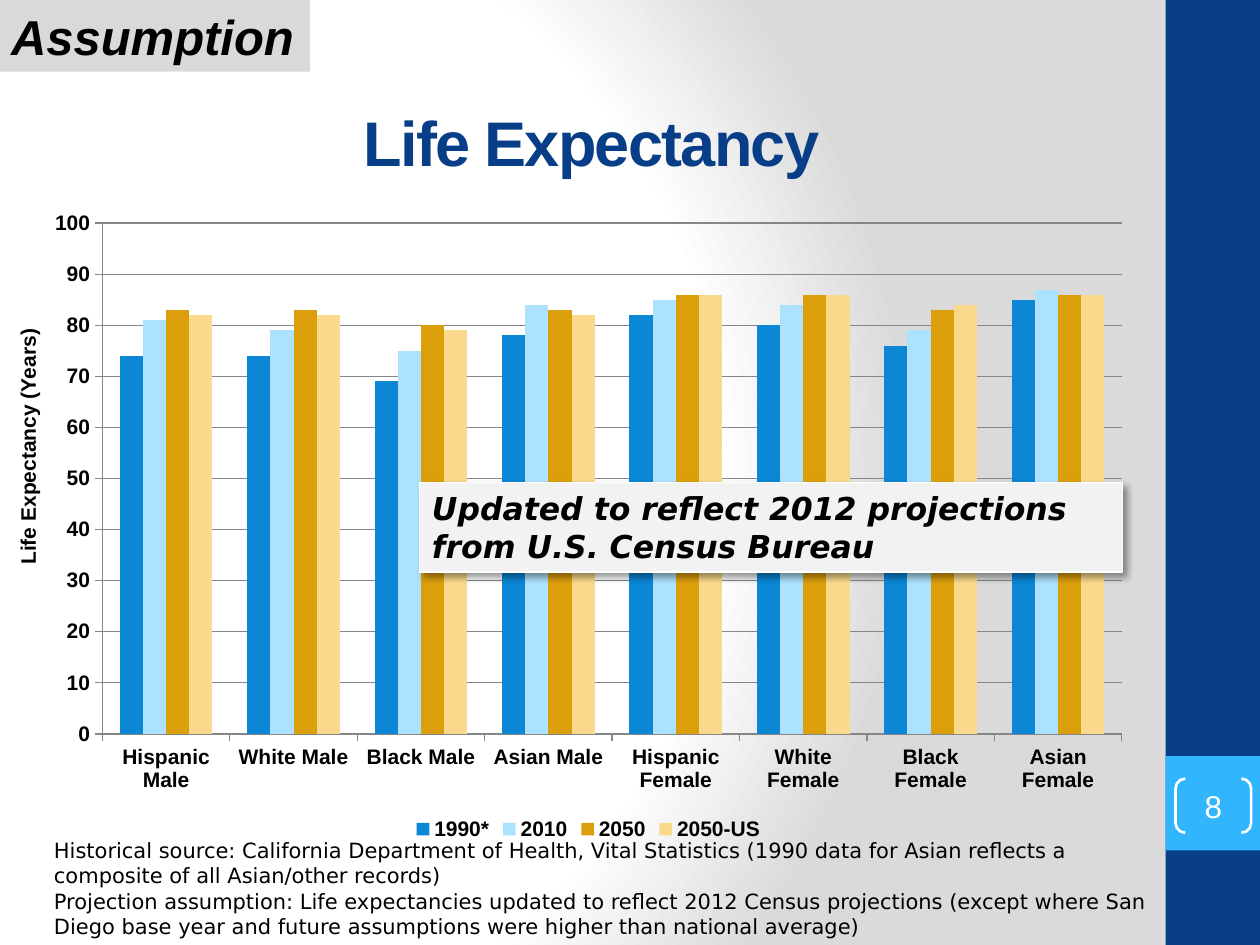
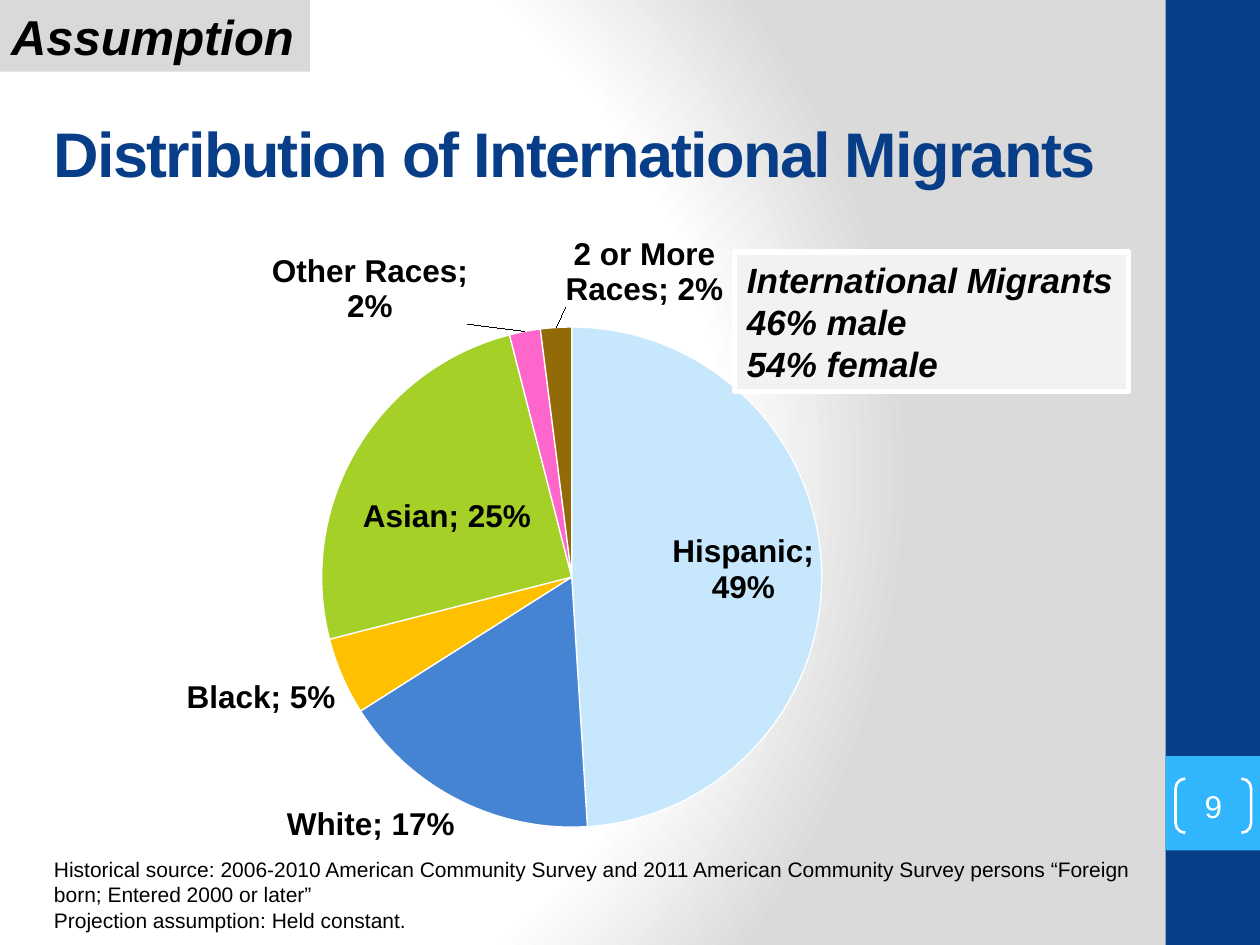
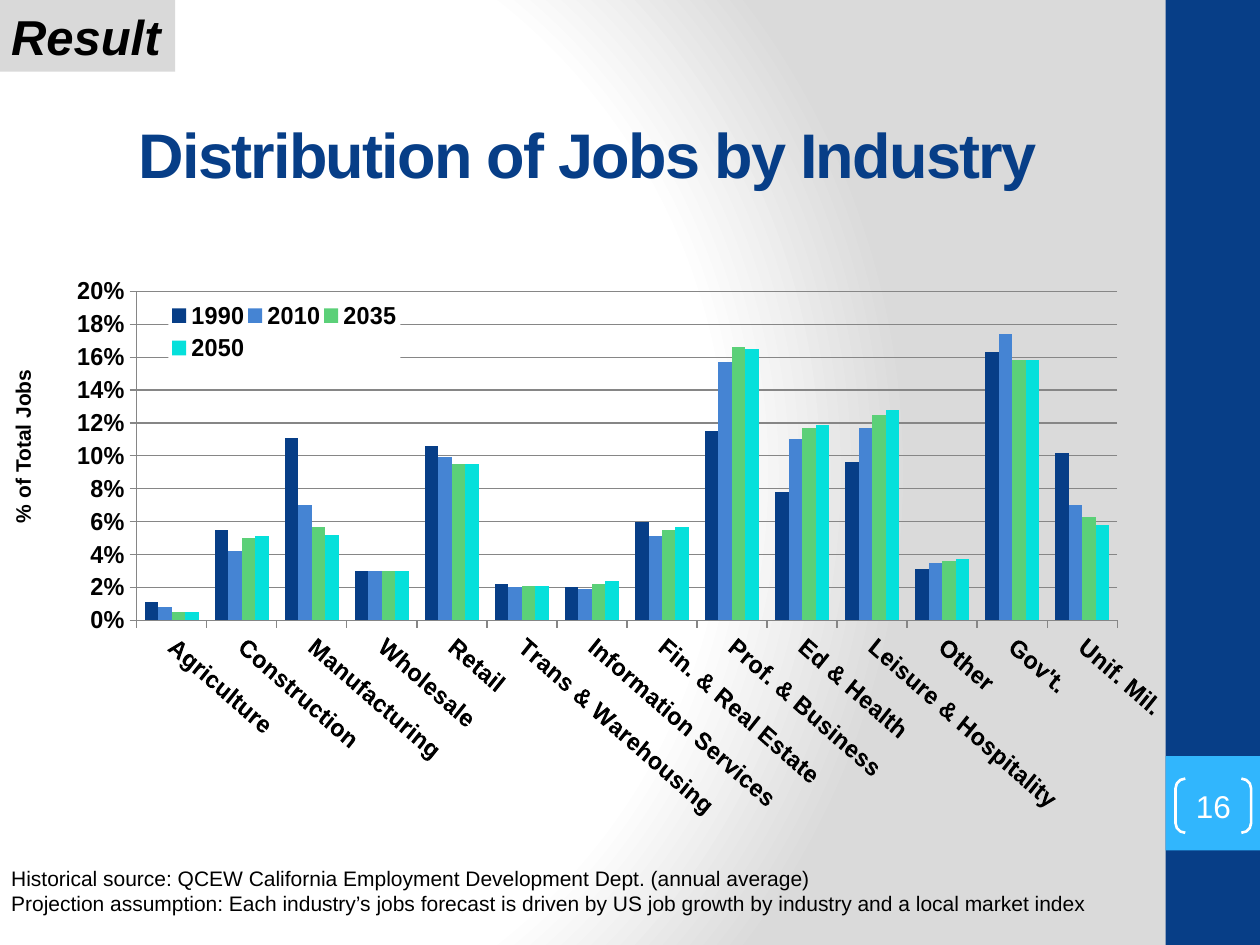
from lxml import etree
from pptx import Presentation
from pptx.chart.data import CategoryChartData
from pptx.dml.color import RGBColor
from pptx.enum.chart import XL_CHART_TYPE, XL_LABEL_POSITION, XL_LEGEND_POSITION, XL_TICK_MARK
from pptx.enum.shapes import MSO_SHAPE
from pptx.enum.text import MSO_ANCHOR, MSO_AUTO_SIZE, PP_ALIGN
from pptx.oxml import parse_xml
from pptx.oxml.ns import nsdecls, qn
from pptx.util import Inches, Pt

NAVY = RGBColor(0x07, 0x3E, 0x87)
SKY = RGBColor(0x31, 0xB6, 0xFD)
WHITE = RGBColor(0xFF, 0xFF, 0xFF)
BLACK = RGBColor(0x00, 0x00, 0x00)
TAG_GRAY = RGBColor(0xD9, 0xD9, 0xD9)
CALLOUT_GRAY = RGBColor(0xF2, 0xF2, 0xF2)
AXIS_GRAY = RGBColor(0x86, 0x86, 0x86)
BLUE = RGBColor(0x0B, 0x87, 0xD6)
PALE_BLUE = RGBColor(0xAD, 0xE2, 0xFE)
GOLD = RGBColor(0xDC, 0x9F, 0x0C)
PALE_GOLD = RGBColor(0xF9, 0xD9, 0x8C)
ICE = RGBColor(0xC6, 0xE7, 0xFC)
MID_BLUE = RGBColor(0x45, 0x84, 0xD3)
AMBER = RGBColor(0xFF, 0xC0, 0x00)
LIME = RGBColor(0xA5, 0xD0, 0x28)
PINK = RGBColor(0xFF, 0x66, 0xCC)
BROWN = RGBColor(0x93, 0x6A, 0x08)
GREEN = RGBColor(0x5B, 0xD0, 0x78)
TEAL = RGBColor(0x05, 0xE0, 0xDB)

SANS = "Arial"
WIDE = "DejaVu Sans"
CHART_BOX = (0.26, 1.58, 8.82, 5.13)


def inches(box):
    """Turn a box of plain numbers into lengths."""
    return [Inches(n) for n in box]


def add_panel(slide, box, preset=MSO_SHAPE.RECTANGLE, fill=None, line=None, line_width=0.75):
    """Add a flat preset shape."""
    sp = slide.shapes.add_shape(preset, *inches(box))
    sp.shadow.inherit = False
    if fill is None:
        sp.fill.background()
    else:
        sp.fill.solid()
        sp.fill.fore_color.rgb = fill
    if line is None:
        sp.line.fill.background()
    else:
        sp.line.color.rgb = line
        sp.line.width = Pt(line_width)
    return sp


def write(sp, text, size=12, font=SANS, color=BLACK, bold=False, italic=False, spacing=None,
          align=PP_ALIGN.LEFT, anchor=MSO_ANCHOR.TOP, wrap=True, grow=True, inset=None):
    """Fill a shape with text, one paragraph to a line."""
    tf = sp.text_frame
    tf.word_wrap = wrap
    tf.vertical_anchor = anchor
    tf.auto_size = MSO_AUTO_SIZE.SHAPE_TO_FIT_TEXT if grow else MSO_AUTO_SIZE.NONE
    if inset is not None:
        tf.margin_left = tf.margin_right = tf.margin_top = tf.margin_bottom = Inches(inset)
    for i, line in enumerate(text.split("\n")):
        p = tf.add_paragraph() if i else tf.paragraphs[0]
        p.alignment = align
        r = p.add_run()
        r.text = line
        r.font.size = Pt(size)
        r.font.name = font
        r.font.bold = bold
        r.font.italic = italic
        r.font.color.rgb = color
        if spacing is not None:
            r.font._element.set("spc", str(spacing * 100))
    return sp


def add_text(slide, text, box, **fmt):
    """Add a text box."""
    return write(slide.shapes.add_textbox(*inches(box)), text, **fmt)


def set_background(master):
    """Give every slide the white to gray radial gradient."""
    master.background.fill.gradient()
    grad = master.element.find(".//" + qn("a:gradFill"))
    stops = "".join(
        f'<a:gs pos="{pos * 1000}"><a:srgbClr val="{color}"/></a:gs>'
        for pos, color in ((0, "FFFFFF"), (75, "FFFFFF"), (100, "DADADA")))
    grad.getparent().replace(grad, parse_xml(
        f'<a:gradFill {nsdecls("a")} rotWithShape="1"><a:gsLst>{stops}</a:gsLst>'
        '<a:path path="circle"><a:fillToRect l="20000" t="50000" r="100000" b="50000"/>'
        '</a:path></a:gradFill>'))


def add_frame(prs, number, title, title_box, tag, tag_width, title_align=PP_ALIGN.LEFT):
    """Start a slide with its side band, number, title and corner tag."""
    slide = prs.slides.add_slide(prs.slide_layouts[6])
    add_panel(slide, (9.25, 0, 0.75, 7.5), fill=NAVY)
    add_panel(slide, (9.25, 6, 0.75, 0.75), fill=SKY)
    bracket = add_panel(slide, (9.33, 6.18, 0.6, 0.43), MSO_SHAPE.DOUBLE_BRACKET,
                        line=WHITE, line_width=1.5)
    bracket.adjustments[0] = 0.18
    write(bracket, str(number), size=18, color=WHITE, align=PP_ALIGN.CENTER,
          anchor=MSO_ANCHOR.MIDDLE, grow=False, inset=0)
    add_text(slide, title, title_box, size=36, color=NAVY, bold=True, spacing=-1,
             align=title_align, anchor=MSO_ANCHOR.MIDDLE, grow=False)
    write(add_panel(slide, (-0.01, 0, tag_width, 0.57), fill=TAG_GRAY), tag,
          size=28, bold=True, italic=True, wrap=False)
    return slide


def add_axis_title(slide, text, box):
    """Add a value axis title that reads upwards."""
    add_text(slide, text, box, bold=True).rotation = 270


def add_callout_shadow(sp):
    """Cast a soft shadow to the lower right."""
    effects = sp._element.spPr.find(qn("a:effectLst"))
    effects.append(parse_xml(
        f'<a:outerShdw {nsdecls("a")} blurRad="{Pt(4)}" dist="{Pt(3)}" dir="2700000" algn="tl" '
        'rotWithShape="0"><a:srgbClr val="000000"><a:alpha val="40000"/></a:srgbClr>'
        '</a:outerShdw>'))


def layout_xml(x, y, w=None, h=None, inner=False):
    """Build a manual chart layout, or an offset when no size is given."""
    root = parse_xml(f'<c:layout {nsdecls("c")}><c:manualLayout/></c:layout>')
    values = [("layoutTarget", "inner")] if inner else []
    if w is not None:
        values += [("xMode", "edge"), ("yMode", "edge")]
    values += [("x", x), ("y", y)]
    if w is not None:
        values += [("w", w), ("h", h)]
    for name, value in values:
        etree.SubElement(root[0], qn("c:" + name)).set("val", str(value))
    return root


def place_after(anchor, layout):
    """Put a layout behind its anchor element in place of any other."""
    parent = anchor.getparent()
    for old in parent.findall(qn("c:layout")):
        parent.remove(old)
    anchor.addnext(layout)


def place_plot(chart, *box):
    """Fix the inner plot area."""
    area = chart.element.find(".//" + qn("c:plotArea"))
    for old in area.findall(qn("c:layout")):
        area.remove(old)
    area.insert(0, layout_xml(*box, inner=True))


def add_chart(slide, kind, box, cats, series, size, number_format):
    """Add a chart with bold black text."""
    data = CategoryChartData(number_format=number_format)
    data.categories = cats
    for name, values in series:
        data.add_series(name, values)
    chart = slide.shapes.add_chart(kind, *inches(box), data).chart
    chart.has_title = False
    chart.has_legend = False
    chart.font.size = Pt(size)
    chart.font.name = SANS
    chart.font.bold = True
    chart.font.color.rgb = BLACK
    return chart


def add_columns(slide, box, cats, series, size, gap, top, step, number_format, legend):
    """Add a clustered column chart from (name, colour, values) rows."""
    chart = add_chart(slide, XL_CHART_TYPE.COLUMN_CLUSTERED, box, cats,
                      [(name, values) for name, _, values in series], size, number_format)
    plot = chart.plots[0]
    plot.gap_width = gap
    plot.overlap = 0
    plot.vary_by_categories = False
    for ser, (_, color, _) in zip(plot.series, series):
        ser.format.fill.solid()
        ser.format.fill.fore_color.rgb = color
        ser.invert_if_negative = False
    axis = chart.value_axis
    axis.minimum_scale, axis.maximum_scale, axis.major_unit = 0, top, step
    axis.has_major_gridlines = True
    axis.tick_labels.number_format = number_format
    axis.tick_labels.number_format_is_linked = False
    for ax in (axis, chart.category_axis):
        ax.major_tick_mark = XL_TICK_MARK.OUTSIDE
        ax.minor_tick_mark = XL_TICK_MARK.NONE
        ax.format.line.color.rgb = AXIS_GRAY
    axis.major_gridlines.format.line.color.rgb = AXIS_GRAY
    chart.has_legend = True
    chart.legend.position = legend
    chart.legend.include_in_layout = False
    return chart


def add_pie(slide, box, slices):
    """Add a pie from (name, value, colour, label position, label offset) rows."""
    chart = add_chart(slide, XL_CHART_TYPE.PIE, box, [s[0] for s in slices],
                      [("Series 1", [s[1] for s in slices])], 18, "0%")
    place_plot(chart, 0.26, 0.18, 0.45, 0.81)
    chart.plots[0].vary_by_categories = True
    ser = chart.plots[0].series[0]
    labels = ser.data_labels
    labels.show_value = labels.show_category_name = True
    labels.number_format = "0%"
    labels.number_format_is_linked = False
    for i, (_, _, color, position, _) in enumerate(slices):
        point = ser.points[i]
        point.format.fill.solid()
        point.format.fill.fore_color.rgb = color
        point.format.line.color.rgb = WHITE
        point.format.line.width = Pt(0.75)
        point.data_label.position = position
    for label, (*_, offset) in zip(chart.element.iter(qn("c:dLbl")), slices):
        label.find(qn("c:showCatName")).set("val", "1")
        label.find(qn("c:idx")).addnext(
            parse_xml(f'<c:numFmt {nsdecls("c")} formatCode="0%" sourceLinked="0"/>'))
        label.find(qn("c:showBubbleSize")).addnext(
            parse_xml(f'<c:separator {nsdecls("c")}>; </c:separator>'))
        if offset:
            place_after(label.find(qn("c:idx")), layout_xml(*offset))


def life_expectancy(prs):
    """Build the life expectancy slide."""
    slide = add_frame(prs, 8, "Life Expectancy", (2.79, 0.5, 4, 1.25), "Assumption", 2.47)
    cats = [f"{group} {sex}" for sex in ("Male", "Female")
            for group in ("Hispanic", "White", "Black", "Asian")]
    add_columns(slide, CHART_BOX, cats, [
        ("1990*", BLUE, (74, 74, 69, 78, 82, 80, 76, 85)),
        ("2010", PALE_BLUE, (81, 79, 75, 84, 85, 84, 79, 87)),
        ("2050", GOLD, (83, 83, 80, 83, 86, 86, 83, 86)),
        ("2050-US", PALE_GOLD, (82, 82, 79, 82, 86, 86, 84, 86)),
    ], 12, 150, 100, 10, "General", XL_LEGEND_POSITION.BOTTOM)
    callout = add_panel(slide, (3.33, 3.83, 5.58, 0.71), fill=CALLOUT_GRAY, line=WHITE)
    add_callout_shadow(callout)
    write(callout, "Updated to reflect 2012 projections from U.S. Census Bureau",
          size=18, font=WIDE, bold=True, italic=True)
    add_text(slide, "Historical source: California Department of Health, Vital Statistics "
             "(1990 data for Asian reflects a composite of all Asian/other records)\n"
             "Projection assumption: Life expectancies updated to reflect 2012 Census projections "
             "(except where San Diego base year and future assumptions were higher than "
             "national average)", (0.33, 6.6, 8.92, 0.71), font=WIDE)
    add_axis_title(slide, "Life Expectancy (Years)", (-1.03, 3.18, 2.5, 0.3))


def international_migrants(prs):
    """Build the international migrants slide."""
    slide = add_frame(prs, 9, "Distribution of International Migrants",
                      (0.33, 0.58, 9.5, 1.25), "Assumption", 2.47)
    inside, outside = XL_LABEL_POSITION.INSIDE_END, XL_LABEL_POSITION.OUTSIDE_END
    add_pie(slide, CHART_BOX, [
        ("Hispanic", 0.49, ICE, inside, None),
        ("White", 0.17, MID_BLUE, outside, None),
        ("Black", 0.05, AMBER, outside, None),
        ("Asian", 0.25, LIME, inside, (0, 0.07)),
        ("Other Races", 0.02, PINK, outside, (-0.05, 0)),
        ("2 or More Races", 0.02, BROWN, outside, (0.08, -0.02)),
    ])
    write(add_panel(slide, (5.83, 2, 3.13, 1.11), fill=CALLOUT_GRAY, line=WHITE, line_width=3),
          "International Migrants\n46% male\n54% female",
          size=20, bold=True, italic=True, wrap=False)
    add_text(slide, "Historical source: 2006-2010 American Community Survey and 2011 American "
             "Community Survey persons “Foreign born; Entered 2000 or later”\n"
             "Projection assumption: Held constant.", (0.33, 6.75, 8.92, 0.71))


def jobs_by_industry(prs):
    """Build the jobs by industry slide."""
    slide = add_frame(prs, 16, "Distribution of Jobs by Industry", (0.08, 0.57, 9.17, 1.3),
                      "Result", 1.4, title_align=PP_ALIGN.CENTER)
    cats = ["Agriculture", "Construction", "Manufacturing", "Wholesale", "Retail",
            "Trans & Warehousing", "Information Services", "Fin. & Real Estate",
            "Prof. & Business", "Ed & Health", "Leisure & Hospitality", "Other", "Gov't.",
            "Unif. Mil."]
    chart = add_columns(slide, (0.5, 2.13, 8.76, 4.58), cats, [
        ("1990", NAVY, (0.011, 0.055, 0.111, 0.03, 0.106, 0.022, 0.02, 0.06, 0.115, 0.078,
                        0.096, 0.031, 0.163, 0.102)),
        ("2010", MID_BLUE, (0.008, 0.042, 0.07, 0.03, 0.099, 0.02, 0.019, 0.051, 0.157, 0.11,
                            0.117, 0.035, 0.174, 0.07)),
        ("2035", GREEN, (0.005, 0.05, 0.057, 0.03, 0.095, 0.021, 0.022, 0.055, 0.166, 0.117,
                         0.125, 0.036, 0.158, 0.063)),
        ("2050", TEAL, (0.005, 0.051, 0.052, 0.03, 0.095, 0.021, 0.024, 0.057, 0.165, 0.119,
                        0.128, 0.037, 0.158, 0.058)),
    ], 14, 120, 0.2, 0.02, "0%", XL_LEGEND_POSITION.RIGHT)
    place_plot(chart, 0.07, 0.04, 0.93, 0.57)
    labels = chart.category_axis.tick_labels
    labels.font.size = Pt(14)
    labels.font.bold = True
    body = chart.element.find(".//" + qn("c:catAx")).find(qn("c:txPr")).find(qn("a:bodyPr"))
    body.set("rot", str(40 * 60000))
    chart.legend.include_in_layout = True
    legend = chart.element.find(".//" + qn("c:legend"))
    place_after(legend.find(qn("c:legendPos")), layout_xml(0.1, 0.05, 0.22, 0.12))
    legend.find(qn("c:overlay")).addnext(parse_xml(
        f'<c:spPr {nsdecls("c", "a")}><a:solidFill><a:srgbClr val="{WHITE}"/></a:solidFill>'
        '</c:spPr>'))
    add_text(slide, "Historical source: QCEW California Employment Development Dept. "
             "(annual average)\nProjection assumption: Each industry’s jobs forecast is driven "
             "by US job growth by industry and a local market index", (-0.01, 6.82, 8.92, 0.71))
    add_axis_title(slide, "% of Total Jobs", (-1.07, 2.85, 2.5, 0.3))


def main():
    """Build and save the three slides."""
    prs = Presentation()
    prs.slide_width, prs.slide_height = Inches(10), Inches(7.5)
    set_background(prs.slide_master)
    life_expectancy(prs)
    international_migrants(prs)
    jobs_by_industry(prs)
    prs.save("out.pptx")


if __name__ == "__main__":
    main()
